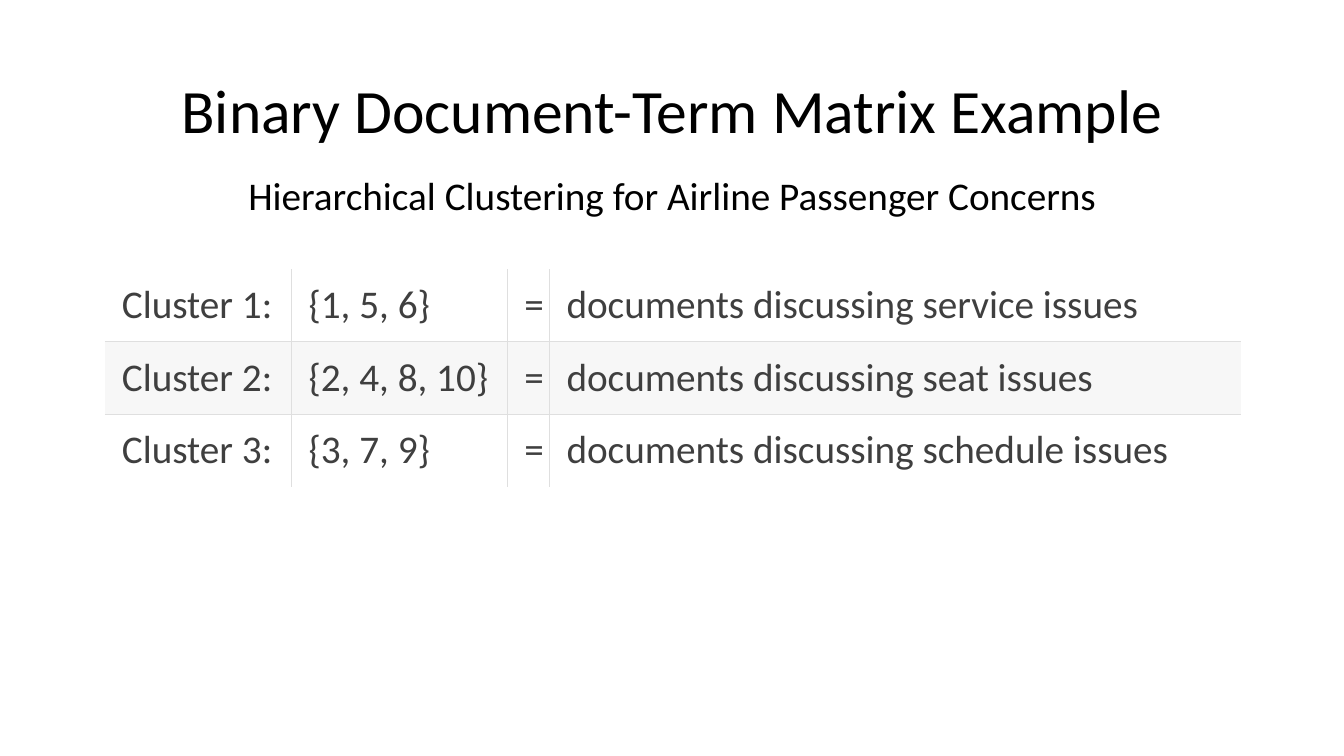
"""Build a slide that lists document clusters in a table."""
from lxml.etree import SubElement
from pptx import Presentation
from pptx.dml.color import RGBColor
from pptx.enum.text import MSO_ANCHOR, PP_ALIGN
from pptx.oxml.ns import qn
from pptx.util import Inches, Pt

TITLE = "Binary Document-Term Matrix Example"
SUBTITLE = "Hierarchical Clustering for Airline Passenger Concerns"
ROWS = [
    ("Cluster 1:", "{1, 5, 6}", "=", "documents discussing service issues"),
    ("Cluster 2:", "{2, 4, 8, 10}", "=", "documents discussing seat issues"),
    ("Cluster 3:", "{3, 7, 9}", "=", "documents discussing schedule issues"),
]
WIDTHS = [1.85, 2.14, 0.42, 6.86]
HEIGHT = 0.72
NBSP = chr(160)
BLACK, GREY, RULE, BAND = "000000", "3F3F3F", "DFDFDF", "F7F7F7"


def color(code):
    return RGBColor.from_string(code)


def style(frame, size, code, align):
    for para in frame.paragraphs:
        para.alignment = align
        for run in para.runs:
            run.font.name = "Calibri"
            run.font.size = Pt(size)
            run.font.bold = False
            run.font.color.rgb = color(code)


def border(cell, side, shown):
    line = SubElement(cell._tc.get_or_add_tcPr(), qn(f"a:ln{side}"), w=str(Pt(0.75)))
    if shown:
        fill = SubElement(line, qn("a:solidFill"))
        SubElement(fill, qn("a:srgbClr"), val=RULE)
    else:
        SubElement(line, qn("a:noFill"))


def add_title(slide):
    title = slide.shapes.title
    title.left, title.top = Inches(0.92), Inches(0.4)
    title.width, title.height = Inches(11.5), Inches(1.45)
    frame = title.text_frame
    frame.text = TITLE
    frame.vertical_anchor = MSO_ANCHOR.MIDDLE
    frame.paragraphs[0].line_spacing = 0.9
    style(frame, 44, BLACK, PP_ALIGN.CENTER)


def add_subtitle(slide):
    box = slide.shapes.add_textbox(0, Inches(1.65), Inches(13.33), Inches(0.57))
    frame = box.text_frame
    frame.word_wrap = True
    frame.text = SUBTITLE
    style(frame, 28, BLACK, PP_ALIGN.CENTER)


def add_clusters(slide):
    last_row, last_col = len(ROWS) - 1, len(WIDTHS) - 1
    table = slide.shapes.add_table(
        len(ROWS), len(WIDTHS), Inches(1.04), Inches(2.67),
        Inches(sum(WIDTHS)), Inches(HEIGHT * len(ROWS))).table
    table.first_row = table.horz_banding = False
    for col, width in zip(table.columns, WIDTHS):
        col.width = Inches(width)
    for r, texts in enumerate(ROWS):
        table.rows[r].height = Inches(HEIGHT)
        for c, text in enumerate(texts):
            cell = table.cell(r, c)
            cell.text = text.replace(" ", NBSP)
            cell.margin_left = cell.margin_right = Inches(0.17)
            cell.margin_top = cell.margin_bottom = Inches(0.12)
            style(cell.text_frame, 28, GREY, PP_ALIGN.LEFT)
            inner = {"L": c > 0, "R": c < last_col, "T": r > 0, "B": r < last_row}
            for side, shown in inner.items():
                border(cell, side, shown)
            if r % 2:
                cell.fill.solid()
                cell.fill.fore_color.rgb = color(BAND)
            else:
                cell.fill.background()


def main():
    deck = Presentation()
    deck.slide_width, deck.slide_height = Inches(13.33), Inches(7.5)
    slide = deck.slides.add_slide(deck.slide_layouts[5])
    add_title(slide)
    add_clusters(slide)
    add_subtitle(slide)
    deck.save("out.pptx")


if __name__ == "__main__":
    main()
